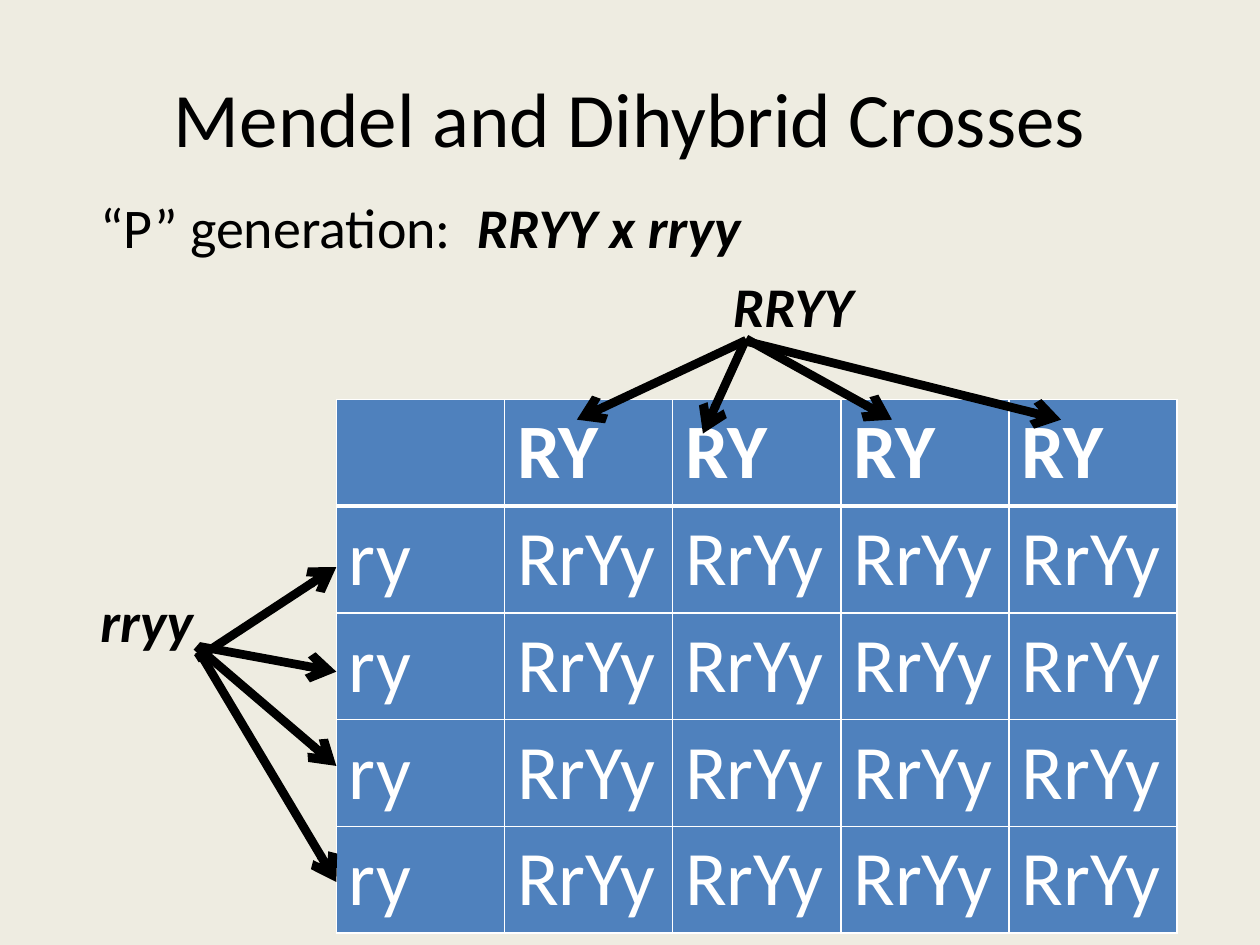
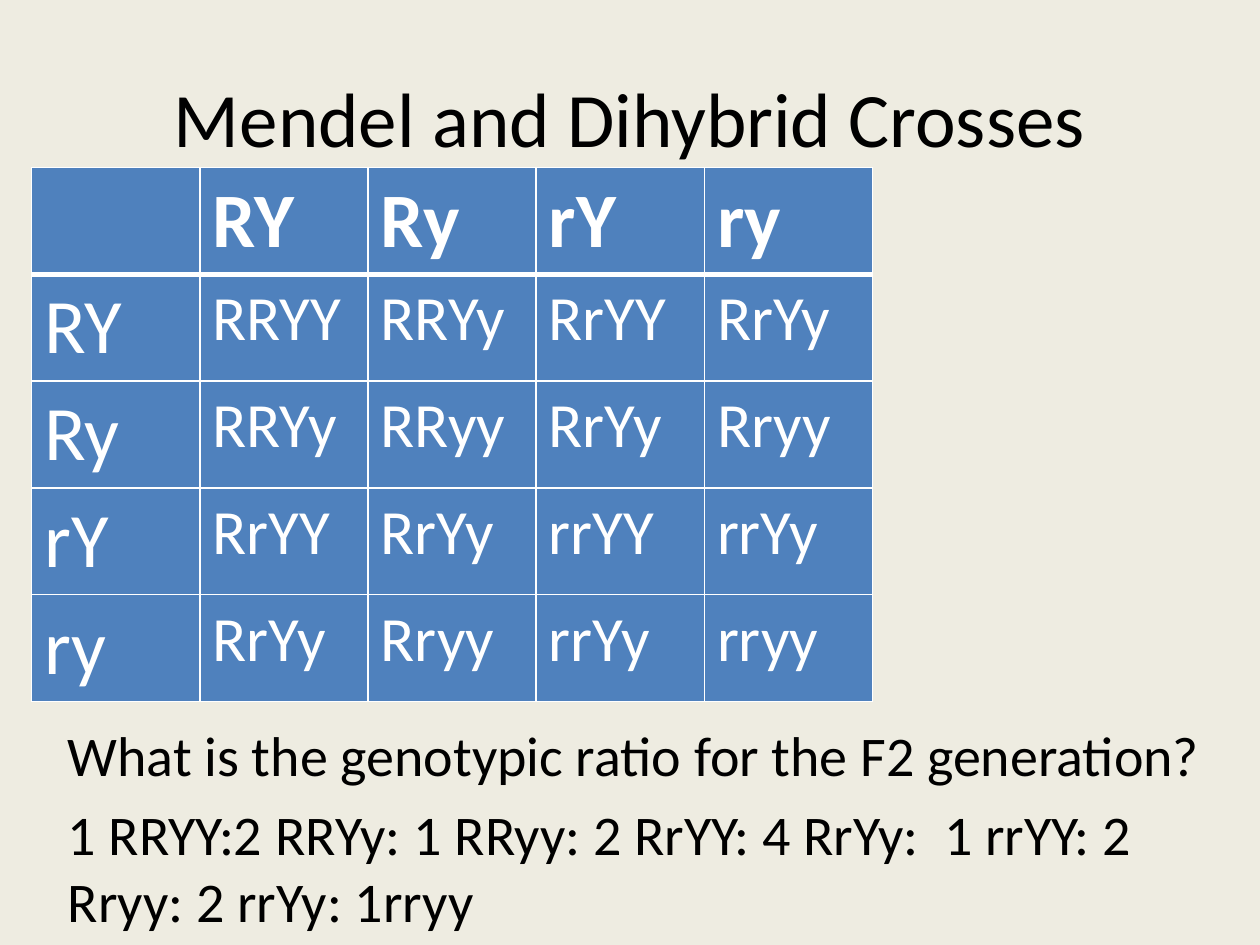
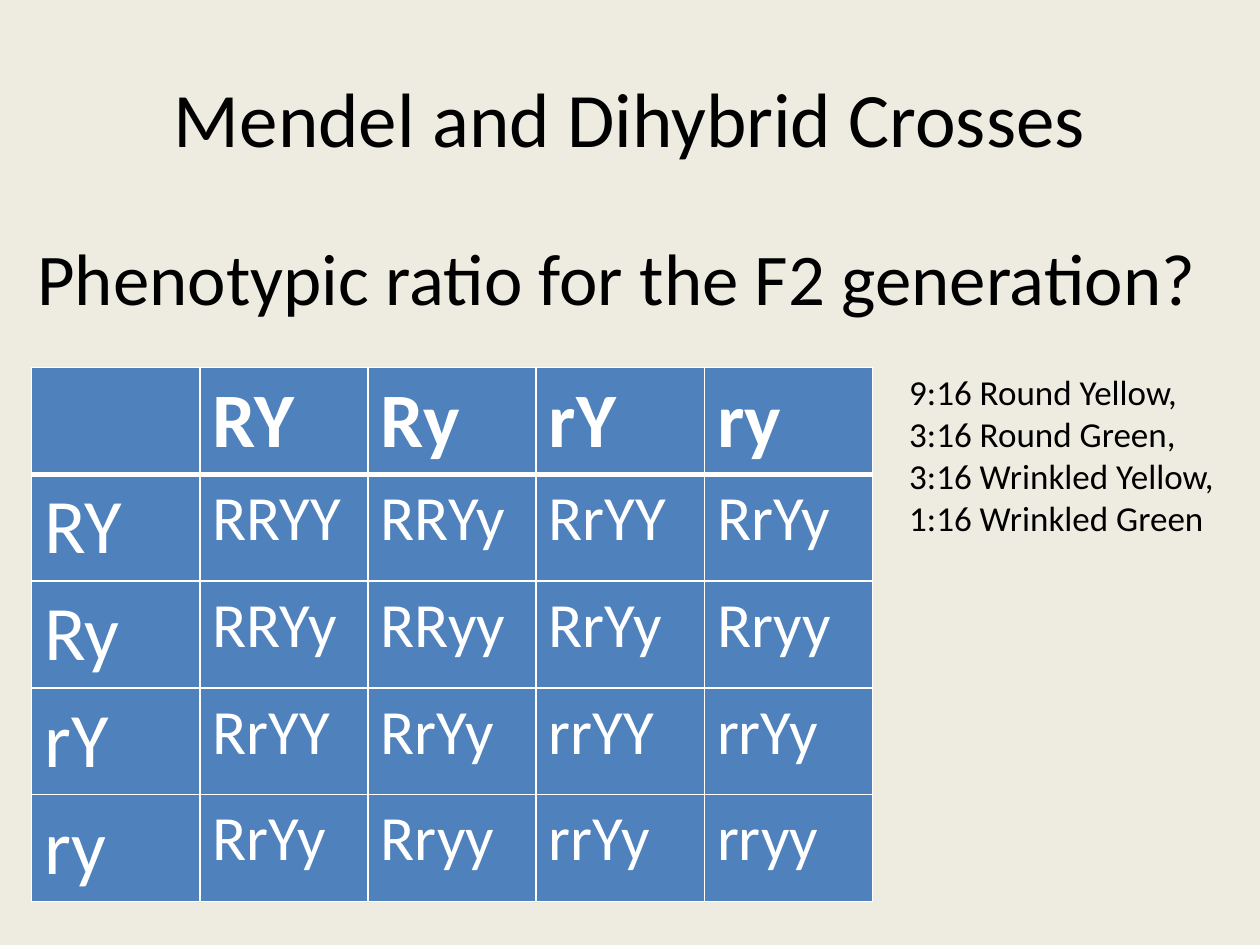
import typing

import lxml.etree
import pptx
import pptx.dml.color
import pptx.enum.shapes
import pptx.enum.text
import pptx.oxml.ns
import pptx.util

Cm = pptx.util.Cm
Pt = pptx.util.Pt

FONT = "Calibri"
BLACK = "000000"
WHITE = "FFFFFF"
CREAM = "EEECE1"
BLUE = "4F81BD"

TITLE = "Mendel and Dihybrid Crosses"
INDENT = 0.3
COLUMN_WIDTH = 3.39
ROW_HEIGHT = 2.15
THIN, THICK = 1, 3
F2_GAMETES = ["RY", "Ry", "rY", "ry"]

# Arrow ends (from x, from y, to x, to y) in cm from the table's top left corner
PARENT_ARROWS = [
    (8.26, -1.19, 4.85, 0.41),
    (8.26, -1.22, 7.39, 0.69),
    (8.26, -1.22, 11.2, 0.41),
    (8.26, -1.17, 14.61, 0.41),
    (-2.82, 5.23, 0, 3.38),
    (-2.77, 4.98, 0, 5.49),
    (-2.82, 4.98, 0, 7.39),
    (-2.77, 5.08, 0, 9.73),
]


class Box(typing.NamedTuple):
    """A region of the slide, in centimetres."""
    left: float
    top: float
    width: float
    height: float

    def lengths(self):
        return [Cm(value) for value in self]


TITLE_BOX = Box(1.27, 0.76, 22.86, 3.18)


def rgb(code):
    return pptx.dml.color.RGBColor.from_string(code)


def add_child(parent, tag, **attributes):
    child = lxml.etree.SubElement(parent, pptx.oxml.ns.qn(tag))
    for name, value in attributes.items():
        child.set(name, str(value))
    return child


def write(para, text, size=32, color=BLACK, bold=False, italic=False):
    span = para.add_run()
    span.text = text
    span.font.name = FONT
    span.font.size = Pt(size)
    span.font.bold = bold
    span.font.italic = italic
    span.font.color.rgb = rgb(color)


def next_para(frame, indent=INDENT, before=None):
    """Return an unbulleted paragraph, using the frame's first one if it is empty."""
    first = frame.paragraphs[0]
    para = frame.add_paragraph() if first.runs else first
    properties = para._p.get_or_add_pPr()
    properties.set("marL", str(Cm(indent)))
    properties.set("indent", "0")
    if before is not None:
        para.space_before = Pt(before)
    add_child(properties, "a:buNone")
    return para


def add_slide(deck, body_box=None):
    """Add a titled slide and return it with its body's text frame."""
    page = deck.slides.add_slide(deck.slide_layouts[1])
    write(page.shapes.title.text_frame.paragraphs[0], TITLE, size=44)
    body = page.placeholders[1]
    body.left, body.top, body.width, body.height = body_box.lengths()
    body.text_frame.auto_size = pptx.enum.text.MSO_AUTO_SIZE.NONE
    return page, body.text_frame


def set_borders(cell, top, bottom):
    properties = cell._tc.get_or_add_tcPr()
    widths = {"a:lnL": THIN, "a:lnR": THIN, "a:lnT": top, "a:lnB": bottom}
    for position, (tag, width) in enumerate(widths.items()):
        line = add_child(properties, tag, w=Pt(width))
        add_child(add_child(line, "a:solidFill"), "a:srgbClr", val=WHITE)
        properties.insert(position, line)


def cross(first, second):
    """Pair the alleles of two gametes, dominant (upper case) first."""
    return "".join("".join(sorted(pair)) for pair in zip(first, second))


def add_punnett(page, left, top, column_gametes, row_gametes, offspring_size):
    rows, columns = len(row_gametes) + 1, len(column_gametes) + 1
    box = Box(left, top, columns * COLUMN_WIDTH, rows * ROW_HEIGHT)
    table = page.shapes.add_table(rows, columns, *box.lengths()).table
    for column in table.columns:
        column.width = Cm(COLUMN_WIDTH)

    lines = [["", *column_gametes]]
    lines += [[own, *(cross(own, other) for other in column_gametes)]
              for own in row_gametes]
    for r, line in enumerate(lines):
        table.rows[r].height = Cm(ROW_HEIGHT)
        for c, text in enumerate(line):
            cell = table.cell(r, c)
            cell.fill.solid()
            cell.fill.fore_color.rgb = rgb(BLUE)
            set_borders(cell, THICK if r == 1 else THIN, THICK if r == 0 else THIN)
            if text:
                write(cell.text_frame.paragraphs[0], text, color=WHITE, bold=r == 0,
                      size=offspring_size if r and c else 44)


def add_arrow(page, left, top, ends):
    x1, y1, x2, y2 = ends
    arrow = page.shapes.add_connector(
        pptx.enum.shapes.MSO_CONNECTOR.STRAIGHT,
        Cm(left + x1), Cm(top + y1), Cm(left + x2), Cm(top + y2))
    arrow.line.color.rgb = rgb(BLACK)
    arrow.line.width = Pt(5)
    add_child(arrow.line._get_or_add_ln(), "a:tailEnd", type="arrow")
    add_child(arrow._element.spPr, "a:effectLst")


def add_ratios(page, box, ratios):
    frame = page.shapes.add_textbox(*box.lengths()).text_frame
    frame.word_wrap = True
    for ratio in ratios:
        write(next_para(frame), ratio, size=20)


def parent_slide(deck):
    page, body = add_slide(deck, Box(1.47, 3.76, 22.86, 12.57))
    generation = next_para(body)
    write(generation, "“P” generation:  ")
    write(generation, "RRYY x rryy", bold=True, italic=True)
    write(next_para(body, indent=13.05), "RRYY", bold=True, italic=True)
    write(next_para(body, before=142), "rryy", bold=True, italic=True)

    left, top = 6.78, 8.05
    add_punnett(page, left, top, ["RY"] * 4, ["ry"] * 4, offspring_size=44)
    for ends in PARENT_ARROWS:
        add_arrow(page, left, top, ends)


def genotype_slide(deck):
    page, body = add_slide(deck, Box(0.81, 14.4, 24.56, 4.65))
    write(next_para(body), "What is the genotypic ratio for the F2 generation?")
    write(next_para(body), "1 RRYY:2 RRYy: 1 RRyy: 2 RrYY: 4 RrYy:  1 rrYY: 2 "
                           "Rryy: 2 rrYy: 1rryy")
    add_punnett(page, 0.64, 3.38, F2_GAMETES, F2_GAMETES, offspring_size=36)


def phenotype_slide(deck):
    page, body = add_slide(deck, Box(0.2, 4.57, 24.56, 4.65))
    write(next_para(body), "Phenotypic ratio for the F2 generation?", size=41.6)
    add_punnett(page, 0.64, 7.41, F2_GAMETES, F2_GAMETES, offspring_size=36)
    add_ratios(page, Box(17.78, 7.34, 7.2, 3.68), [
        "9:16 Round Yellow,",
        "3:16 Round Green,",
        "3:16 Wrinkled Yellow,",
        "1:16 Wrinkled Green",
    ])


def set_up_template(deck):
    deck.slide_width, deck.slide_height = Cm(25.4), Cm(19.05)
    background = deck.slide_master.background.fill
    background.solid()
    background.fore_color.rgb = rgb(CREAM)
    title = deck.slide_layouts[1].placeholders[0]
    title.left, title.top, title.width, title.height = TITLE_BOX.lengths()


def main():
    deck = pptx.Presentation()
    set_up_template(deck)
    parent_slide(deck)
    genotype_slide(deck)
    phenotype_slide(deck)
    deck.save("out.pptx")


if __name__ == "__main__":
    main()
